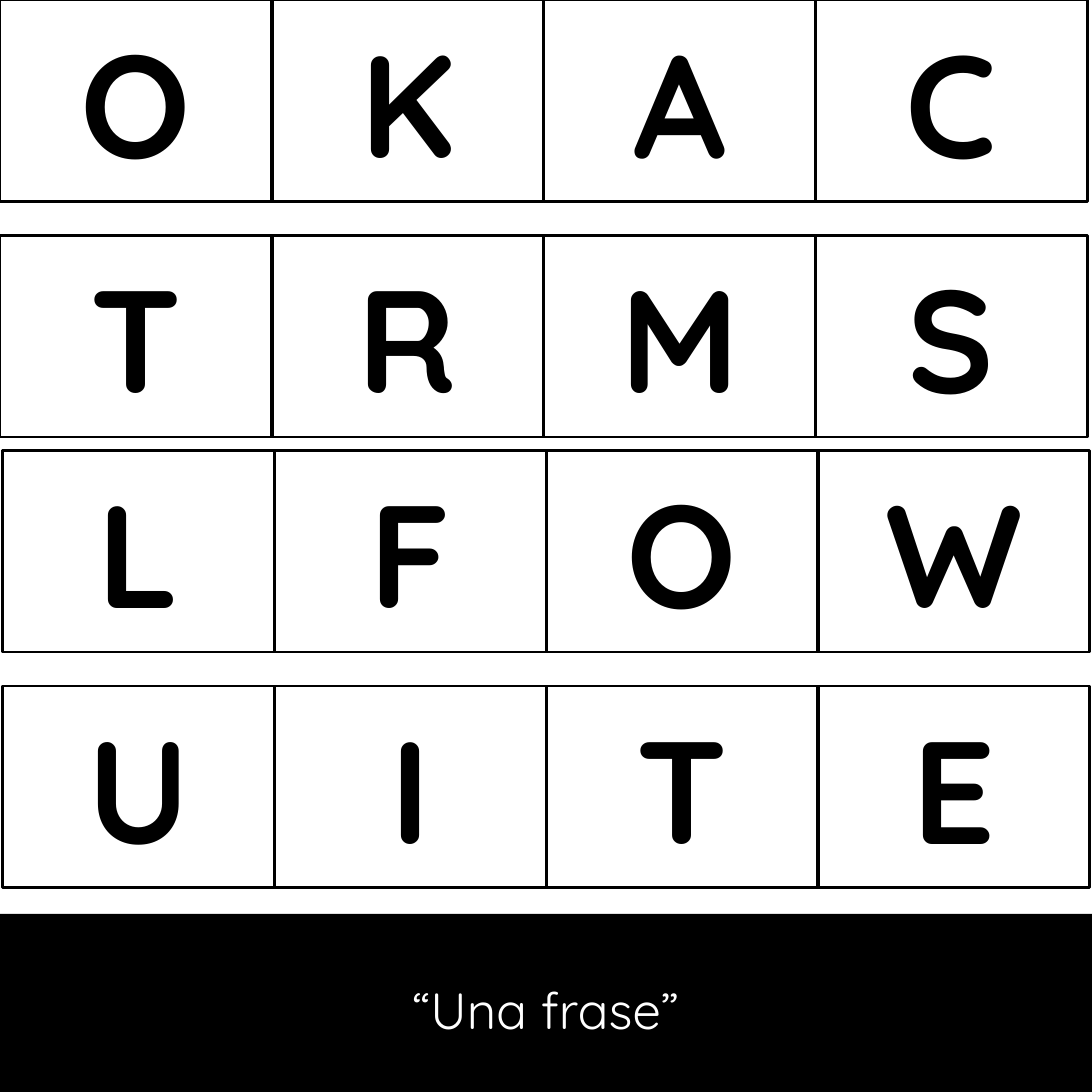
from dataclasses import dataclass

from pptx import Presentation
from pptx.dml.color import RGBColor
from pptx.enum.shapes import MSO_SHAPE
from pptx.enum.text import MSO_ANCHOR as ANCHOR, PP_ALIGN as ALIGN
from pptx.util import Inches, Pt

COLORS = {"ink": "000000", "paper": "FFFFFF"}
FONT = "Quicksand"
SIDE = 4.17
CARD_W, CARD_H = 1.04, 0.77
CARD_STEP = 4.15 / 4


@dataclass
class LetterRow:
    letters: str
    left: float
    top: float


@dataclass
class Box:
    text: str
    left: float
    top: float
    width: float
    height: float
    size: int
    color: str
    bold: bool = False
    fill: str = ""
    line: str = ""
    anchor: ANCHOR = ANCHOR.TOP


ROWS = [
    LetterRow("OKAC", 0, 0),
    LetterRow("TRMS", 0, 0.9),
    LetterRow("LFOW", 0.01, 1.72),
    LetterRow("UITE", 0.01, 2.62),
]


def rgb(name: str) -> RGBColor:
    return RGBColor.from_string(COLORS[name])


def draw_box(s, box: Box) -> None:
    sp = s.shapes.add_shape(
        MSO_SHAPE.RECTANGLE, Inches(box.left), Inches(box.top),
        Inches(box.width), Inches(box.height))
    sp.shadow.inherit = False
    if box.fill:
        sp.fill.solid()
        sp.fill.fore_color.rgb = rgb(box.fill)
    else:
        sp.fill.background()
    if box.line:
        sp.line.color.rgb = rgb(box.line)
        sp.line.width = Pt(0.75)
    else:
        sp.line.fill.background()

    tf = sp.text_frame
    tf.word_wrap = True
    tf.vertical_anchor = box.anchor
    p = tf.paragraphs[0]
    p.text = box.text
    p.alignment = ALIGN.CENTER
    p.font.name = FONT
    p.font.size = Pt(box.size)
    p.font.bold = box.bold
    p.font.color.rgb = rgb(box.color)


def draw_row(s, row: LetterRow) -> None:
    for i, letter in enumerate(row.letters):
        draw_box(s, Box(letter, row.left + i * CARD_STEP, row.top, CARD_W, CARD_H,
                        size=40, color="ink", bold=True, line="ink"))


def main() -> None:
    prs = Presentation()
    prs.slide_width = prs.slide_height = Inches(SIDE)
    s = prs.slides.add_slide(prs.slide_layouts[6])
    s.background.fill.solid()
    s.background.fill.fore_color.rgb = rgb("paper")

    # Letter cards
    for row in ROWS:
        draw_row(s, row)

    # Phrase banner
    draw_box(s, Box("“Una frase”", 0, 3.49, SIDE, 0.73, size=14, color="paper",
                    fill="ink", anchor=ANCHOR.MIDDLE))

    prs.save("out.pptx")


if __name__ == "__main__":
    main()
